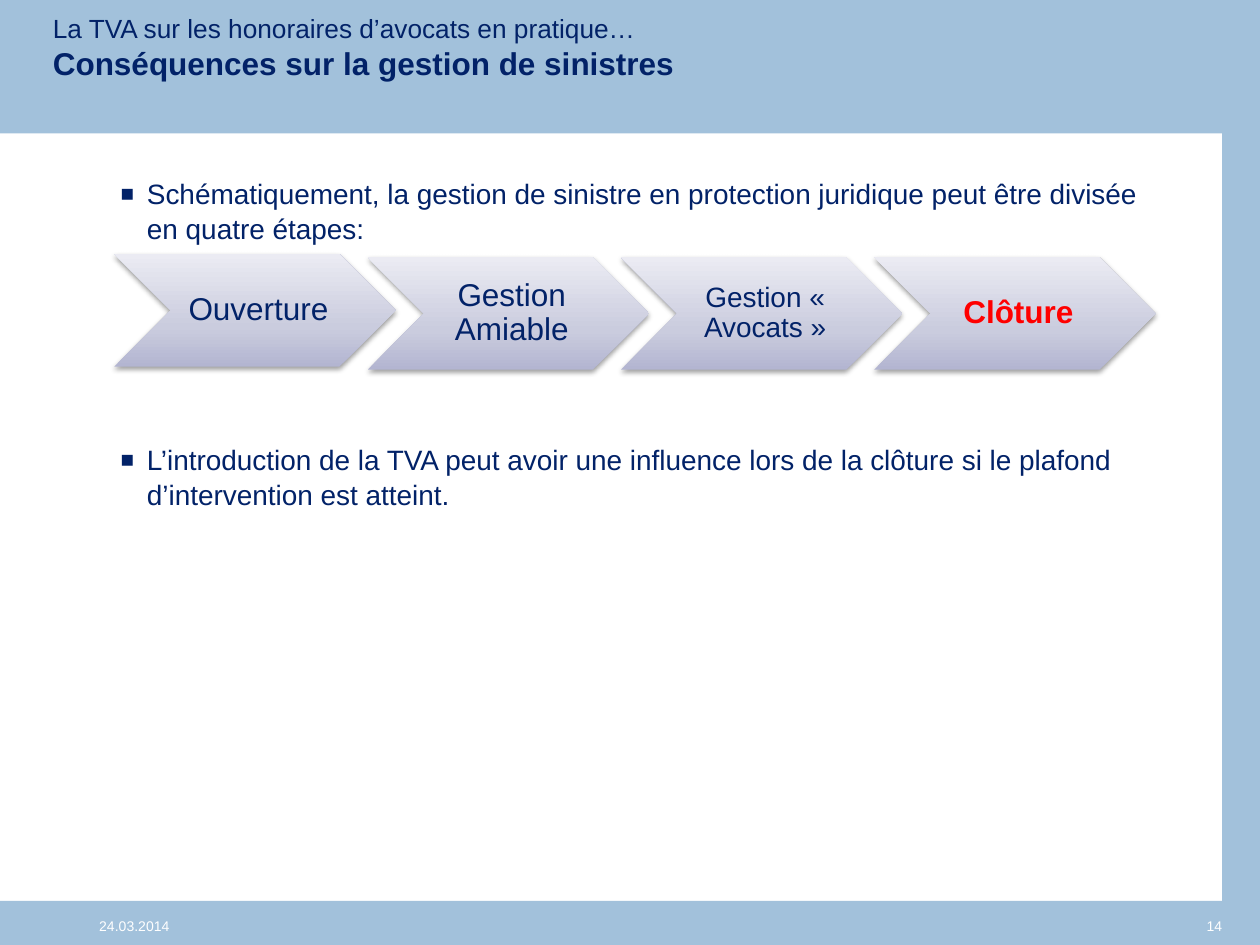
from pptx import Presentation
from pptx.dml.color import RGBColor
from pptx.enum.shapes import MSO_SHAPE
from pptx.enum.text import MSO_ANCHOR, MSO_AUTO_SIZE, PP_ALIGN
from pptx.oxml import parse_xml
from pptx.oxml.ns import nsdecls
from pptx.util import Pt

NAVY, RED, WHITE, BLUE = "022268", "FF0000", "FFFFFF", "A2C1DB"
TITLE = [("La TVA sur les honoraires d’avocats en pratique…", 15, False),
         ("Conséquences sur la gestion de sinistres", 18, True)]
BARS = [(0, 514.8, 720, 25.2), (698.4, 0, 21.6, 540), (0, 0, 720, 76.3)]
POINTS = [
    ("Schématiquement, la gestion de sinistre en protection juridique "
     "peut être divisée en quatre étapes:", 0),
    ("L’introduction de la TVA peut avoir une influence lors de la "
     "clôture si le plafond d’intervention est atteint.", 112),
]
STEPS = [
    ("Ouverture", 145.2, dict(size=18)),
    ("Gestion Amiable", 147, dict(size=18)),
    ("Gestion « Avocats »", 147, dict(size=16)),
    ("Clôture", 147, dict(size=18, color=RED, bold=True)),
]
NOTES = [("24.03.2014", (56.7, 524.2, 147.6, 12), PP_ALIGN.LEFT),
         ("14", (626.4, 524.2, 72, 10), PP_ALIGN.RIGHT)]
STOPS = [(0, "B3B5D1"), (35, "CACCDE"), (100, "EBEBF3")]
LEFT, STEP, WIDE, HIGH = 65.3, 144.75, 160.8, 64.3


def paint(fmt, color):
    fmt.rgb = RGBColor.from_string(color)


def write(para, text, size=16, color=NAVY, bold=False, align=PP_ALIGN.LEFT,
          line=None, before=0):
    para.alignment = align
    para.space_before = Pt(before)
    if line:
        para.line_spacing = line
    run = para.add_run()
    run.text = text
    font = run.font
    font.name, font.size, font.bold = "Arial", Pt(size), bold
    paint(font.color, color)


def setup(frame, pads=(0, 0, 0, 0), anchor=MSO_ANCHOR.TOP):
    frame.word_wrap = True
    frame.auto_size = MSO_AUTO_SIZE.NONE
    frame.vertical_anchor = anchor
    (frame.margin_left, frame.margin_top,
     frame.margin_right, frame.margin_bottom) = map(Pt, pads)
    return frame


def add_box(slide, box, **opts):
    return setup(slide.shapes.add_textbox(*map(Pt, box)).text_frame, **opts)


def add_bar(slide, box):
    bar = slide.shapes.add_shape(MSO_SHAPE.RECTANGLE, *map(Pt, box))
    bar.shadow.inherit = False
    bar.fill.solid()
    paint(bar.fill.fore_color, BLUE)
    bar.line.fill.background()


def add_title(slide):
    title = slide.shapes.title
    title.element.getparent().append(title.element)
    title.left, title.top, title.width, title.height = map(
        Pt, (23, 3.6, 535.7, 41.8))
    para = setup(title.text_frame, pads=(7.2, 3.6, 7.2, 3.6)).paragraphs[0]
    for i, (text, size, bold) in enumerate(TITLE):
        if i:
            para.add_line_break()
        write(para, text, size=size, bold=bold)


def add_points(slide):
    frame = add_box(slide, (54, 100.1, 612, 408.2))
    for i, (text, gap) in enumerate(POINTS):
        para = frame.add_paragraph() if i else frame.paragraphs[0]
        props = para._p.get_or_add_pPr()
        props.set("marL", str(Pt(30)))
        props.set("indent", str(-Pt(15)))
        for tag in ('buSzPct val="80000"', 'buFont typeface="Arial"',
                    'buChar char="■"'):
            props.append(parse_xml(f"<a:{tag} {nsdecls('a')}/>"))
        write(para, text, line=Pt(20), before=gap)


def add_step(slide, left, top, text, style):
    step = slide.shapes.add_shape(
        MSO_SHAPE.CHEVRON, Pt(left), Pt(top), Pt(WIDE), Pt(HIGH))
    step.line.fill.background()
    stops = "".join(f'<a:gs pos="{pos * 1000}"><a:srgbClr val="{color}"/></a:gs>'
                    for pos, color in STOPS)
    fill = parse_xml(f'<a:gradFill {nsdecls("a")}><a:gsLst>{stops}</a:gsLst>'
                     '<a:lin ang="16200000" scaled="0"/></a:gradFill>')
    shade = parse_xml(
        f'<a:effectLst {nsdecls("a")}><a:outerShdw blurRad="{Pt(3.1)}" '
        f'dist="{Pt(1.6)}" dir="5400000" rotWithShape="0">'
        '<a:srgbClr val="000000"><a:alpha val="38000"/></a:srgbClr>'
        '</a:outerShdw></a:effectLst>')
    props = step.element.spPr
    props.insert(2, fill)
    props.append(shade)
    frame = setup(step.text_frame, pads=(6, 2, 2, 2), anchor=MSO_ANCHOR.MIDDLE)
    write(frame.paragraphs[0], text, align=PP_ALIGN.CENTER, line=0.9, **style)


def main():
    """Build the slide on the stages of claims handling."""
    deck = Presentation()
    deck.slide_width, deck.slide_height = Pt(720), Pt(540)
    slide = deck.slides.add_slide(deck.slide_layouts[5])
    for box in BARS:
        add_bar(slide, box)
    add_points(slide)
    for text, box, align in NOTES:
        write(add_box(slide, box).paragraphs[0], text, size=8, color=WHITE,
              align=align)
    add_title(slide)
    for i, (text, top, style) in enumerate(STEPS):
        add_step(slide, LEFT + i * STEP, top, text, style)
    deck.save("out.pptx")


if __name__ == "__main__":
    main()
